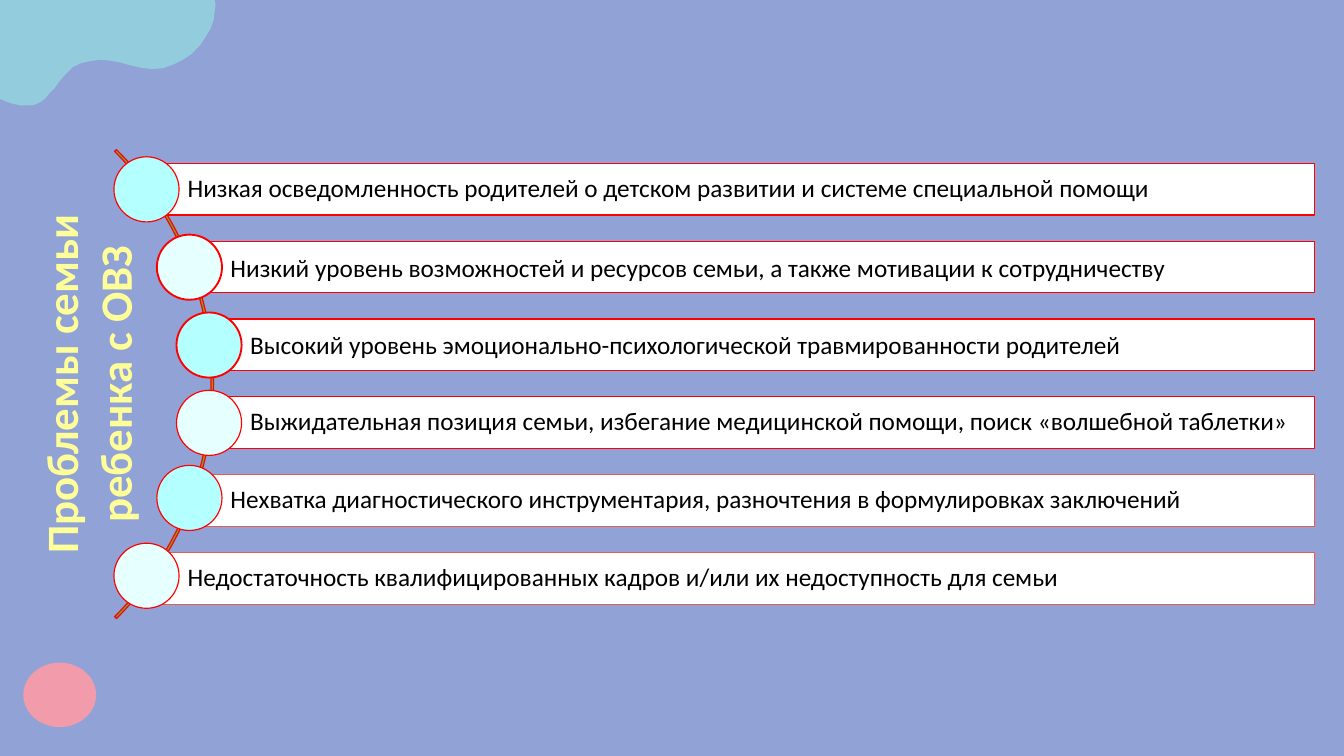
"""Build the slide on the problems of families raising a child with special needs."""
from dataclasses import dataclass

from pptx import Presentation
from pptx import util as u
from pptx.dml.color import RGBColor
from pptx.enum import shapes, text


@dataclass(frozen=True)
class Theme:
    font: str = "Calibri"
    title_size: float = 48
    body_size: float = 27
    background: str = "91A3D6"
    title: str = "FFFF99"
    ink: str = "000000"
    bar: str = "FFFFFF"
    wave: str = "93CDDD"
    spot: str = "F29CAB"
    arc: str = "76A52E"
    outline: str = "FF0000"
    soft_outline: str = "E55E54"
    markers: tuple = ("B4FFFF", "E6FFFF")


THEME = Theme()
SHAPE = shapes.MSO_SHAPE
BAR_TOP, BAR_STEP, BAR_HEIGHT, BAR_RIGHT = 175, 83.4, 55.4, 1408.3
MARKER_SIZE = 69.8

PROBLEMS = [
    ("Низкая осведомленность родителей о детском развитии и системе специальной помощи",
     157, THEME.outline, 7, 1.25, 0.9),
    ("Низкий уровень возможностей и ресурсов семьи, а также мотивации к сотрудничеству",
     203, THEME.outline, 7, 2, 1),
    ("Высокий уровень эмоционально-психологической травмированности родителей",
     224, THEME.outline, 7, 2, 1),
    ("Выжидательная позиция семьи, избегание медицинской помощи, поиск «волшебной таблетки»",
     224, THEME.outline, 7, 1.25, 0.9),
    ("Нехватка диагностического инструментария, разночтения в формулировках заключений",
     203, THEME.soft_outline, 10, 1.25, 0.9),
    ("Недостаточность квалифицированных кадров и/или их недоступность для семьи",
     157, THEME.soft_outline, 10, 1.25, 0.9),
]

WAVE = [
    (230, 0), (231, 6), (230, 12), (229, 21), (226, 30), (220, 40), (214, 49),
    (205, 58), (196, 64), (186, 69), (175, 73), (164, 74), (153, 73), (140, 70),
    (129, 67), (118, 65), (106, 64), (94, 66), (86, 68), (78, 72), (73, 77),
    (68, 82), (63, 88), (58, 95), (53, 100), (49, 105), (44, 109), (38, 112),
    (31, 113), (22, 113), (13, 111), (7, 109), (0, 106), (0, 0),
]


def paint(shape, fill, line=None, width=1.25):
    """Give a shape its fill and outline, without a shadow."""
    shape.shadow.inherit = False
    shape.fill.solid()
    shape.fill.fore_color.rgb = RGBColor.from_string(fill)
    if line:
        shape.line.color.rgb = RGBColor.from_string(line)
        shape.line.width = u.Pt(width)
    else:
        shape.line.fill.background()


def add_shape(page, kind, left, top, width, height, fill, line=None, line_width=1.25):
    """Add a painted preset shape."""
    shape = page.shapes.add_shape(kind, u.Pt(left), u.Pt(top), u.Pt(width), u.Pt(height))
    paint(shape, fill, line, line_width)
    return shape


def write(box, wording, *, size, color, bold=False, align=text.PP_ALIGN.LEFT,
          anchor=text.MSO_ANCHOR.MIDDLE, insets=(0, 0, 0, 0), spacing=1.0):
    """Put one formatted paragraph into a box."""
    frame = box.text_frame
    frame.word_wrap = True
    frame.vertical_anchor = anchor
    frame.margin_left, frame.margin_top, frame.margin_right, frame.margin_bottom = map(u.Pt, insets)
    para = frame.paragraphs[0]
    para.alignment = align
    para.line_spacing = spacing
    span = para.add_run()
    span.text = wording
    span.font.name = THEME.font
    span.font.size = u.Pt(size)
    span.font.bold = bold
    span.font.color.rgb = RGBColor.from_string(color)


def add_wave(page):
    """Draw the wavy patch in the top left corner."""
    builder = page.shapes.build_freeform(*WAVE[0], scale=u.Pt(1))
    builder.add_line_segments(WAVE[1:], close=True)
    paint(builder.convert_to_shape(), THEME.wave)


def place_title(page, wording):
    """Turn the title to run upwards along the left edge."""
    title = page.shapes.title
    title.left, title.top, title.width, title.height = map(u.Pt, (-144, 353.5, 476, 116.6))
    title.rotation = 270
    write(title, wording, size=THEME.title_size, color=THEME.title, bold=True,
          align=text.PP_ALIGN.CENTER, anchor=text.MSO_ANCHOR.TOP)
    title.text_frame.auto_size = text.MSO_AUTO_SIZE.SHAPE_TO_FIT_TEXT


def add_arc(page):
    """Draw the thin arc that links the markers."""
    arc = add_shape(page, SHAPE.BLOCK_ARC, -481.7, 56.2, 710.6, 710.6, THEME.arc, THEME.outline)
    for index, value in enumerate((189, 27, 0.004)):
        arc.adjustments[index] = value


def add_problem(page, index, wording, left, outline, rise, marker_line, spacing):
    """Add a labelled bar with its round marker."""
    top = BAR_TOP + index * BAR_STEP
    bar = add_shape(page, SHAPE.RECTANGLE, left, top, BAR_RIGHT - left, BAR_HEIGHT,
                    THEME.bar, outline)
    write(bar, wording, size=THEME.body_size, color=THEME.ink,
          insets=(44, 5, 5, 5), spacing=spacing)
    add_shape(page, SHAPE.OVAL, left - MARKER_SIZE / 2, top - rise, MARKER_SIZE, MARKER_SIZE,
              THEME.markers[index % 2], THEME.outline, marker_line)


def main():
    """Build and save the deck."""
    deck = Presentation()
    deck.slide_width, deck.slide_height = u.Pt(1440), u.Pt(810)
    page = deck.slides.add_slide(deck.slide_layouts.get_by_name("Title Only"))
    page.background.fill.solid()
    page.background.fill.fore_color.rgb = RGBColor.from_string(THEME.background)
    add_wave(page)
    place_title(page, "Проблемы семьи ребенка с ОВЗ")
    add_shape(page, SHAPE.FLOWCHART_CONNECTOR, 25, 710, 78, 69, THEME.spot)
    add_arc(page)
    for index, problem in enumerate(PROBLEMS):
        add_problem(page, index, *problem)
    deck.save("out.pptx")


if __name__ == "__main__":
    main()
